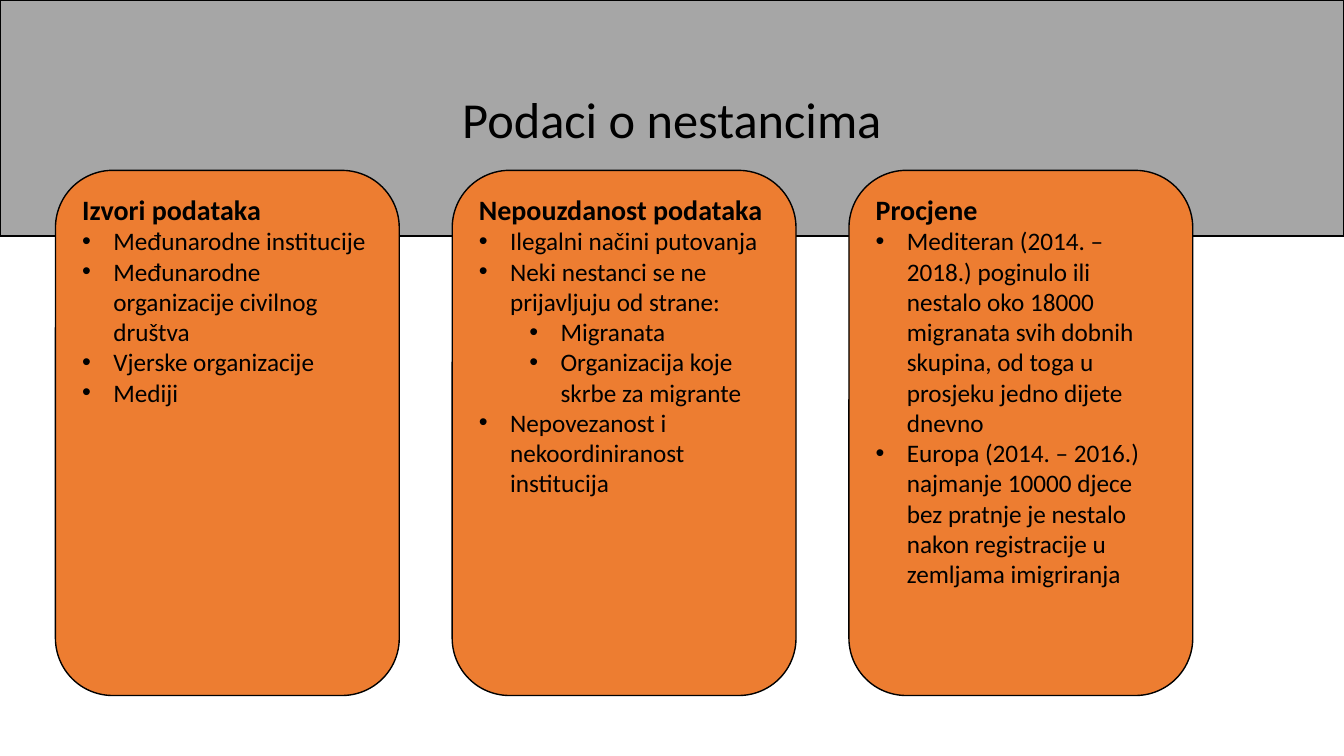
from lxml.etree import SubElement
from pptx import Presentation
from pptx.dml.color import RGBColor
from pptx.enum.shapes import MSO_SHAPE
from pptx.enum.text import MSO_ANCHOR, PP_ALIGN
from pptx.oxml.ns import qn
from pptx.util import Inches, Pt

BLACK = RGBColor(0x00, 0x00, 0x00)
GRAY = RGBColor(0xA6, 0xA6, 0xA6)
ORANGE = RGBColor(0xED, 0x7D, 0x31)
FONT = "Calibri"

CARD_LEFT, CARD_TOP, CARD_STEP = 0.55, 1.69, 3.935
CARD_WIDTH, CARD_HEIGHT = 3.41, 5.21
BULLET_HANG, LEVEL_INDENT = 0.31, 0.5

# Each card: heading, then (level, text) bullets
CARDS = [
    ("Izvori podataka", [
        (0, "Međunarodne institucije"),
        (0, "Međunarodne organizacije civilnog društva"),
        (0, "Vjerske organizacije"),
        (0, "Mediji"),
    ]),
    ("Nepouzdanost podataka", [
        (0, "Ilegalni načini putovanja"),
        (0, "Neki nestanci se ne prijavljuju od strane:"),
        (1, "Migranata"),
        (1, "Organizacija koje skrbe za migrante"),
        (0, "Nepovezanost i nekoordiniranost institucija"),
    ]),
    ("Procjene", [
        (0, "Mediteran (2014. – 2018.) poginulo ili nestalo oko 18000 migranata "
            "svih dobnih skupina, od toga u prosjeku jedno dijete dnevno"),
        (0, "Europa (2014. – 2016.) najmanje 10000 djece bez pratnje je nestalo "
            "nakon registracije u zemljama imigriranja"),
    ]),
]


def paint(panel, color):
    panel.fill.solid()
    panel.fill.fore_color.rgb = color
    panel.line.color.rgb = BLACK
    panel.line.width = Pt(1)


def write(paragraph, text, size, bold=False, align=PP_ALIGN.LEFT):
    paragraph.alignment = align
    paragraph.line_spacing = 1.0
    run = paragraph.add_run()
    run.text = text
    run.font.name = FONT
    run.font.size = Pt(size)
    run.font.bold = bold
    run.font.color.rgb = BLACK


def add_bullet(paragraph, level):
    paragraph.level = level
    properties = paragraph._p.get_or_add_pPr()
    properties.set("marL", str(Inches(BULLET_HANG + level * LEVEL_INDENT)))
    properties.set("indent", str(-Inches(BULLET_HANG)))
    SubElement(properties, qn("a:buFont")).set("typeface", "Arial")
    SubElement(properties, qn("a:buChar")).set("char", "•")


def add_title_banner(slide, text):
    banner = slide.shapes.title
    banner.left, banner.top = Inches(0), Inches(0)
    banner.width, banner.height = Inches(13.33), Inches(2.34)
    # Round the corners of the title placeholder
    outline = SubElement(banner._element.spPr, qn("a:prstGeom"))
    outline.set("prst", "roundRect")
    SubElement(outline, qn("a:avLst"))
    paint(banner, GRAY)
    banner.text_frame.vertical_anchor = MSO_ANCHOR.MIDDLE
    write(banner.text_frame.paragraphs[0], text, 36, align=PP_ALIGN.CENTER)


def add_card(slide, left, heading, bullets):
    card = slide.shapes.add_shape(
        MSO_SHAPE.ROUNDED_RECTANGLE, Inches(left), Inches(CARD_TOP),
        Inches(CARD_WIDTH), Inches(CARD_HEIGHT))
    card.shadow.inherit = False
    paint(card, ORANGE)
    frame = card.text_frame
    frame.word_wrap = True
    frame.vertical_anchor = MSO_ANCHOR.TOP
    write(frame.paragraphs[0], heading, 20, bold=True)
    for level, text in bullets:
        paragraph = frame.add_paragraph()
        write(paragraph, text, 18)
        add_bullet(paragraph, level)


def main():
    deck = Presentation()
    deck.slide_width, deck.slide_height = Inches(13.33), Inches(7.5)
    slide = deck.slides.add_slide(deck.slide_layouts[5])

    # Title across the top
    add_title_banner(slide, "Podaci o nestancima")

    # Three overlapping cards at equal steps
    for index, (heading, bullets) in enumerate(CARDS):
        add_card(slide, CARD_LEFT + index * CARD_STEP, heading, bullets)

    deck.save("out.pptx")


if __name__ == "__main__":
    main()
